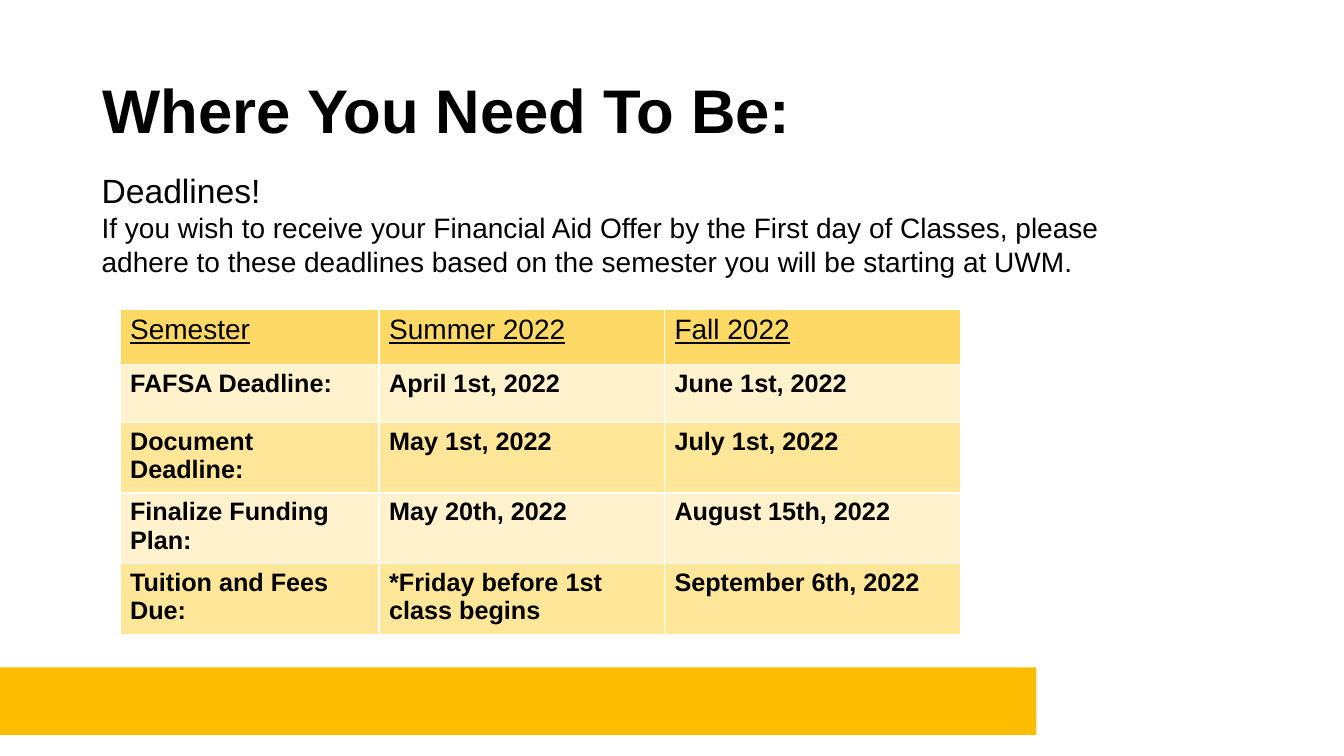
"""Build the financial aid deadlines slide."""
from lxml.etree import SubElement
from pptx import Presentation
from pptx.dml.color import RGBColor
from pptx.enum.shapes import MSO_SHAPE
from pptx.enum.text import MSO_ANCHOR, MSO_AUTO_SIZE, PP_ALIGN
from pptx.oxml.ns import qn
from pptx.util import Inches, Pt

FONT = "Arial"
BLACK, WHITE, GOLD = "000000", "FFFFFF", "FFBD00"
HEADER_FILL, LIGHT_FILL, DARK_FILL = "FFD966", "FFF2CC", "FFE699"


def color(hex_value):
    return RGBColor.from_string(hex_value)


def style(paragraph, size, bold=False, underline=False):
    for run in paragraph.runs:
        run.font.name = FONT
        run.font.size = Pt(size)
        run.font.bold = bold
        run.font.underline = underline
        run.font.color.rgb = color(BLACK)


deck = Presentation()
deck.slide_width, deck.slide_height = Inches(13.33), Inches(7.5)
slide = deck.slides.add_slide(deck.slide_layouts[5])

footer_band = slide.shapes.add_shape(
    MSO_SHAPE.RECTANGLE, 0, Inches(6.62), Inches(10.28), Inches(0.67))
footer_band.shadow.inherit = False
footer_band.fill.solid()
footer_band.fill.fore_color.rgb = color(GOLD)
footer_band.line.fill.background()

heading = slide.shapes.title
heading.left, heading.top = Inches(0.92), Inches(0.4)
heading.width, heading.height = Inches(11.5), Inches(1.45)
heading.text_frame.text = "Where You Need To Be:"
heading.text_frame.vertical_anchor = MSO_ANCHOR.MIDDLE
heading.text_frame.auto_size = MSO_AUTO_SIZE.NONE
heading_line = heading.text_frame.paragraphs[0]
heading_line.alignment = PP_ALIGN.LEFT
heading_line.line_spacing = 0.9
style(heading_line, 44, bold=True)

intro = slide.shapes.add_textbox(
    Inches(0.91), Inches(1.64), Inches(11), Inches(1.18)).text_frame
intro.word_wrap = True
intro.auto_size = MSO_AUTO_SIZE.SHAPE_TO_FIT_TEXT
intro.text = (
    "Deadlines!\n"
    "If you wish to receive your Financial Aid Offer by the First day of Classes, "
    "please adhere to these deadlines based on the semester you will be starting at UWM.")
for paragraph, size in zip(intro.paragraphs, (24, 20)):
    style(paragraph, size)

deadlines = [
    ("Semester", "Summer 2022", "Fall 2022"),
    ("FAFSA Deadline:", "April 1st, 2022", "June 1st, 2022"),
    ("Document Deadline:", "May 1st, 2022", "July 1st, 2022"),
    ("Finalize Funding Plan:", "May 20th, 2022", "August 15th, 2022"),
    ("Tuition and Fees Due:", "*Friday before 1st class begins", "September 6th, 2022"),
]
column_widths = (2.57, 2.83, 2.94)
row_heights = (0.55, 0.57, 0.7, 0.7, 0.7)
schedule = slide.shapes.add_table(
    len(deadlines), len(column_widths), Inches(1.19), Inches(3.07),
    Inches(sum(column_widths)), Inches(sum(row_heights))).table
for column, width in zip(schedule.columns, column_widths):
    column.width = Inches(width)

for row_index, (entries, height) in enumerate(zip(deadlines, row_heights)):
    schedule.rows[row_index].height = Inches(height)
    is_header = row_index == 0
    row_fill = HEADER_FILL if is_header else (DARK_FILL, LIGHT_FILL)[row_index % 2]
    for column_index, entry in enumerate(entries):
        cell = schedule.cell(row_index, column_index)
        cell.text_frame.text = entry
        style(cell.text_frame.paragraphs[0], 20 if is_header else 18,
              bold=not is_header, underline=is_header)
        for side in ("lnL", "lnR", "lnT", "lnB"):
            border = SubElement(cell._tc.get_or_add_tcPr(), qn(f"a:{side}"), w=str(Pt(1)))
            border_fill = SubElement(border, qn("a:solidFill"))
            SubElement(border_fill, qn("a:srgbClr"), val=WHITE)
        cell.fill.solid()
        cell.fill.fore_color.rgb = color(row_fill)

deck.save("out.pptx")
